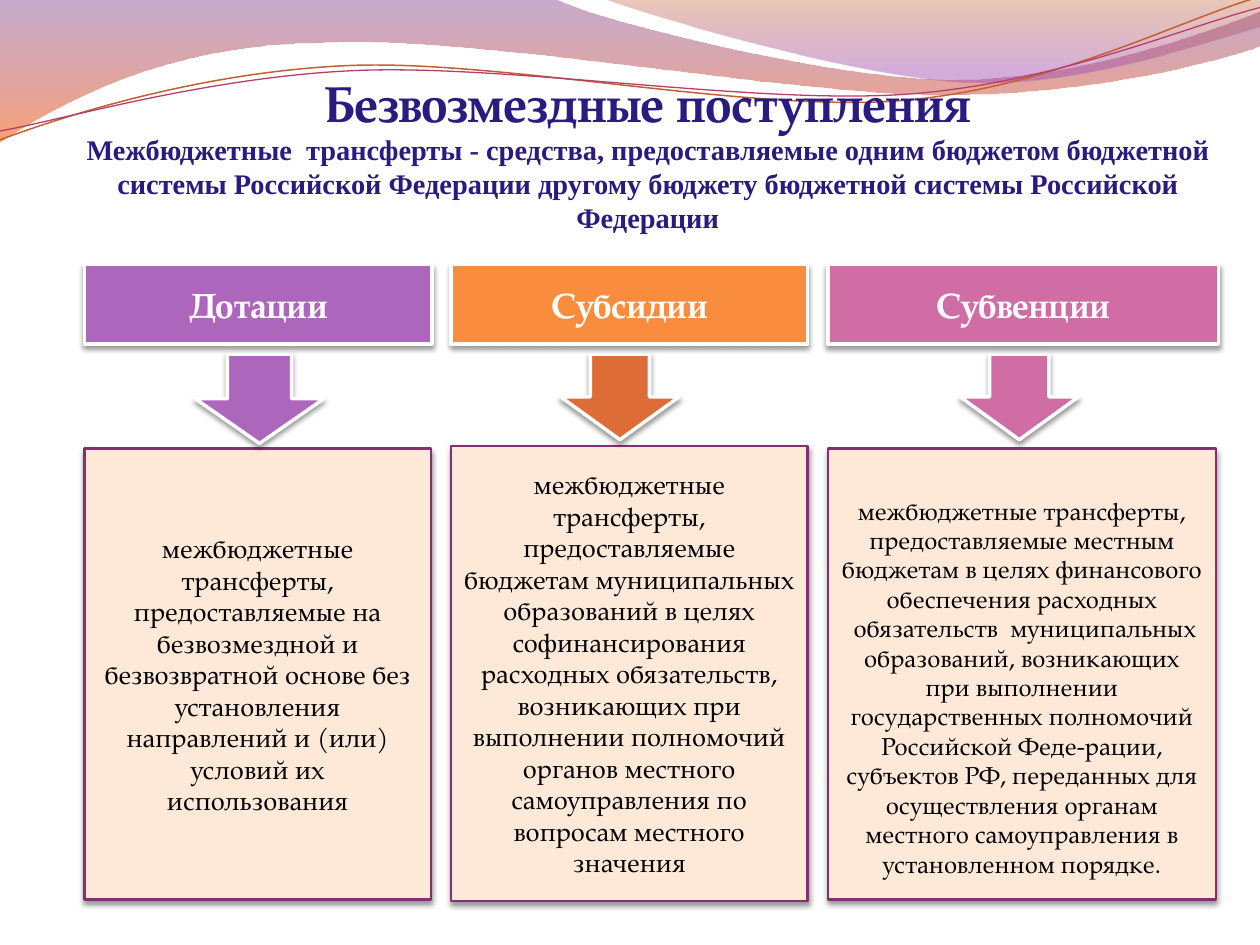
import math
from dataclasses import dataclass

import pptx
import pptx.dml.color
import pptx.enum.shapes
import pptx.enum.text
import pptx.oxml
import pptx.oxml.ns
import pptx.util
from pptx.dml.color import RGBColor
from pptx.util import Inches

SERIF = "TeX Gyre Pagella"
TIMES = "Times New Roman"
INDIGO = RGBColor(0x29, 0x1B, 0x7F)
WHITE = RGBColor(0xFF, 0xFF, 0xFF)
BLACK = RGBColor(0, 0, 0)
CREAM = RGBColor(0xFE, 0xE8, 0xD8)
PLUM = RGBColor(0x85, 0x2F, 0x73)
VIOLET = RGBColor(0xAC, 0x66, 0xBB)
ORANGE = RGBColor(0xFA, 0x8D, 0x3D)
RUST = RGBColor(0xDE, 0x6C, 0x36)
PINK = RGBColor(0xCF, 0x6D, 0xA4)
WAVE_PURPLE = RGBColor(0x83, 0x45, 0x91)
WAVE_ORANGE = RGBColor(0xF3, 0x53, 0x07)
WAVE_BROWN = RGBColor(0xB7, 0x49, 0x15)
WAVE_LILAC = RGBColor(0xA1, 0x4B, 0xB4)
LINE_ORANGE = RGBColor(0xC4, 0x5F, 0x30)
LINE_CRIMSON = RGBColor(0xB8, 0x3D, 0x68)

Point = tuple[float, float]
Segment = list[Point]  # one point is a straight line, three are a Bezier bend
Box = tuple[float, float, float, float]
RECTANGLE = pptx.enum.shapes.MSO_SHAPE.RECTANGLE
DOWN_ARROW = pptx.enum.shapes.MSO_SHAPE.DOWN_ARROW
NAMESPACE = pptx.oxml.ns.nsdecls("a")
RIBBON_TILT = -2.7
SHADOW = (
    f'<a:effectLst {NAMESPACE}>'
    '<a:outerShdw blurRad="38100" dist="25400" dir="5400000" rotWithShape="0">'
    '<a:srgbClr val="000000"><a:alpha val="40000"/></a:srgbClr>'
    "</a:outerShdw></a:effectLst>"
)


@dataclass
class GradientStop:
    position: float
    color: RGBColor
    opacity: int


@dataclass
class Transfer:
    name: str
    color: RGBColor
    arrow_color: RGBColor
    header: Box
    arrow: Box
    body: Box
    description: list[str]
    size: float = 15
    top_inset: float = 0.05


GRANTS = Transfer(
    "Дотации", VIOLET, VIOLET,
    (0.67, 2.1, 2.76, 0.63), (1.55, 2.81, 1.02, 0.71), (0.67, 3.56, 2.75, 3.58),
    ["межбюджетные трансферты, предоставляемые на безвозмездной и "
     "безвозвратной основе без установления направлений и (или) условий "
     "их использования"],
)
SUBSIDIES = Transfer(
    "Субсидии", ORANGE, RUST,
    (3.58, 2.1, 2.83, 0.63), (4.45, 2.81, 0.94, 0.68), (3.58, 3.54, 2.83, 3.61),
    ["межбюджетные трансферты, предоставляемые бюджетам муниципальных "
     "образований в целях софинансирования расходных обязательств, "
     "возникающих при выполнении полномочий органов местного "
     "самоуправления по вопросам местного значения"],
)
SUBVENTIONS = Transfer(
    "Субвенции", PINK, PINK,
    (6.57, 2.1, 3.1, 0.63), (7.62, 2.81, 0.94, 0.68), (6.57, 3.56, 3.08, 3.58),
    ["межбюджетные трансферты, предоставляемые местным бюджетам в целях "
     "финансового обеспечения расходных",
     " обязательств  муниципальных образований, возникающих при выполнении "
     "государственных полномочий Российской Феде-рации, субъектов РФ, "
     "переданных для осуществления органам местного самоуправления в "
     "установленном порядке."],
    size=14, top_inset=0.25,
)


def draw_outline(slide, start: Point, segments: list[Segment], close: bool):
    """Build the outline on its control points, then bend the Bezier segments."""
    emu = [(Inches(x), Inches(y)) for x, y in [start, *sum(segments, [])]]
    builder = slide.shapes.build_freeform(*emu[0], scale=1.0)
    builder.add_line_segments(emu[1:], close=close)
    outline = builder.convert_to_shape()
    outline.shadow.inherit = False
    lines = iter(outline._element.spPr.findall(".//" + pptx.oxml.ns.qn("a:lnTo")))
    for segment in segments:
        group = [next(lines) for _ in segment]
        if len(group) == 3:
            bend = pptx.oxml.parse_xml(f"<a:cubicBezTo {NAMESPACE}/>")
            group[0].addprevious(bend)
            for line in group:
                bend.append(line[0])
                line.getparent().remove(line)
    return outline


def draw_wave(slide, start: Point, segments: list[Segment], stops: list[GradientStop]) -> None:
    wave = draw_outline(slide, start, segments, close=True)
    wave.line.fill.background()
    wave.fill.gradient()
    wave.fill.gradient_angle = 270
    for target, stop in zip(wave.fill.gradient_stops, stops):
        target.position = stop.position
        target.color.rgb = stop.color
    colors = wave._element.spPr.findall(".//" + pptx.oxml.ns.qn("a:srgbClr"))
    for color, stop in zip(colors, stops):
        color.append(pptx.oxml.parse_xml(f'<a:alpha {NAMESPACE} val="{stop.opacity * 1000}"/>'))


def draw_ribbon(slide, start: Point, bends: list[Segment], center: Point,
                color: RGBColor, width: float) -> None:
    """Level the bends about the center and tilt the finished shape back."""
    cos, sin = math.cos(math.radians(RIBBON_TILT)), math.sin(math.radians(RIBBON_TILT))

    def level(point: Point) -> Point:
        dx, dy = point[0] - center[0], point[1] - center[1]
        return center[0] + dx * cos + dy * sin, center[1] - dx * sin + dy * cos

    ribbon = draw_outline(slide, level(start), [[level(p) for p in bend] for bend in bends],
                          close=False)
    ribbon.rotation = RIBBON_TILT
    ribbon.fill.background()
    ribbon.line.color.rgb = color
    ribbon.line.width = pptx.util.Pt(width)


def write(paragraph, text: str, size: float, font: str, color: RGBColor, bold: bool) -> None:
    paragraph.alignment = pptx.enum.text.PP_ALIGN.CENTER
    run = paragraph.add_run()
    run.text = text
    run.font.size = pptx.util.Pt(size)
    run.font.name = font
    run.font.color.rgb = color
    run.font.bold = bold


def draw_block(slide, kind, box: Box, fill: RGBColor, line: RGBColor, width: float):
    block = slide.shapes.add_shape(kind, *map(Inches, box))
    block.fill.solid()
    block.fill.fore_color.rgb = fill
    block.line.color.rgb = line
    block.line.width = pptx.util.Pt(width)
    block._element.spPr.append(pptx.oxml.parse_xml(SHADOW))
    block.text_frame.word_wrap = True
    block.text_frame.vertical_anchor = pptx.enum.text.MSO_ANCHOR.MIDDLE
    return block


def draw_body(slide, transfer: Transfer) -> None:
    body = draw_block(slide, RECTANGLE, transfer.body, CREAM, PLUM, 1.5).text_frame
    body.margin_top = Inches(transfer.top_inset)
    for index, text in enumerate(transfer.description):
        paragraph = body.add_paragraph() if index else body.paragraphs[0]
        write(paragraph, text, transfer.size, SERIF, BLACK, False)


def draw_heading(slide) -> None:
    heading = slide.shapes.add_textbox(*map(Inches, (0.66, 0.63, 8.98, 1.5))).text_frame
    heading.word_wrap = True
    heading.vertical_anchor = pptx.enum.text.MSO_ANCHOR.BOTTOM
    heading.margin_left = heading.margin_top = 0
    heading.margin_right = Inches(0.02)
    heading.margin_bottom = Inches(0.27)
    title = heading.paragraphs[0]
    write(title, "Безвозмездные поступления", 28.8, SERIF, INDIGO, True)
    title.add_line_break()
    write(title, "Межбюджетные  трансферты - средства, предоставляемые одним бюджетом "
          "бюджетной системы Российской Федерации другому бюджету бюджетной "
          "системы Российской Федерации", 16.2, TIMES, INDIGO, True)


def main() -> None:
    deck = pptx.Presentation()
    deck.slide_width, deck.slide_height = Inches(10), Inches(7.5)
    slide = deck.slides.add_slide(deck.slide_layouts[6])

    # Waves along the top edge
    draw_wave(slide, (0, -0.01), [
        [(4.4, -0.01)],
        [(4.76, 0.17), (6.64, 0.63), (7.58, 0.63)], [(8.53, 0.63), (9.58, 0.26), (10, 0.09)],
        [(10.01, 0.36)],
        [(9.83, 0.44), (8.7, 0.76), (7.46, 0.75)], [(6.22, 0.75), (3.82, 0.28), (2.57, 0.34)],
        [(1.29, 0.35), (0.46, 0.83), (-0.01, 1.13)], [(0, -0.01)],
    ], [GradientStop(0, WAVE_PURPLE, 45), GradientStop(1, WAVE_ORANGE, 55)])
    draw_wave(slide, (4.79, -0.01), [
        [(5.09, 0.11), (6.82, 0.62), (7.69, 0.65)], [(8.56, 0.69), (9.61, 0.32), (10, 0.21)],
        [(10, 0)], [(4.79, -0.01)],
    ], [GradientStop(0, WAVE_BROWN, 30), GradientStop(0.8, WAVE_LILAC, 45)])

    # Thin ribbons
    draw_ribbon(slide, (0, 1.11), [
        [(0.48, 0.93), (1.58, 0.57), (2.77, 0.52)], [(3.95, 0.47), (5.93, 0.89), (7.13, 0.8)],
        [(8.33, 0.71), (9.38, 0.15), (9.98, -0.02)]], (4.99, 0.58), LINE_ORANGE, 0.85)
    draw_ribbon(slide, (0, 1.04), [
        [(0.47, 0.96), (1.64, 0.61), (2.83, 0.56)], [(4.03, 0.51), (5.97, 0.83), (7.17, 0.75)],
        [(8.36, 0.67), (9.41, 0.21), (10, 0.06)]], (5, 0.59), LINE_CRIMSON, 0.75)

    # Heading, then descriptions, arrows and headers of the transfers
    draw_heading(slide)
    for transfer in (SUBSIDIES, SUBVENTIONS, GRANTS):
        draw_body(slide, transfer)
    for transfer in (GRANTS, SUBSIDIES, SUBVENTIONS):
        draw_block(slide, DOWN_ARROW, transfer.arrow, transfer.arrow_color, WHITE, 2)
    for transfer in (SUBVENTIONS, SUBSIDIES, GRANTS):
        header = draw_block(slide, RECTANGLE, transfer.header, transfer.color, WHITE, 2)
        write(header.text_frame.paragraphs[0], transfer.name, 20, SERIF, WHITE, True)

    deck.save("out.pptx")


if __name__ == "__main__":
    main()
